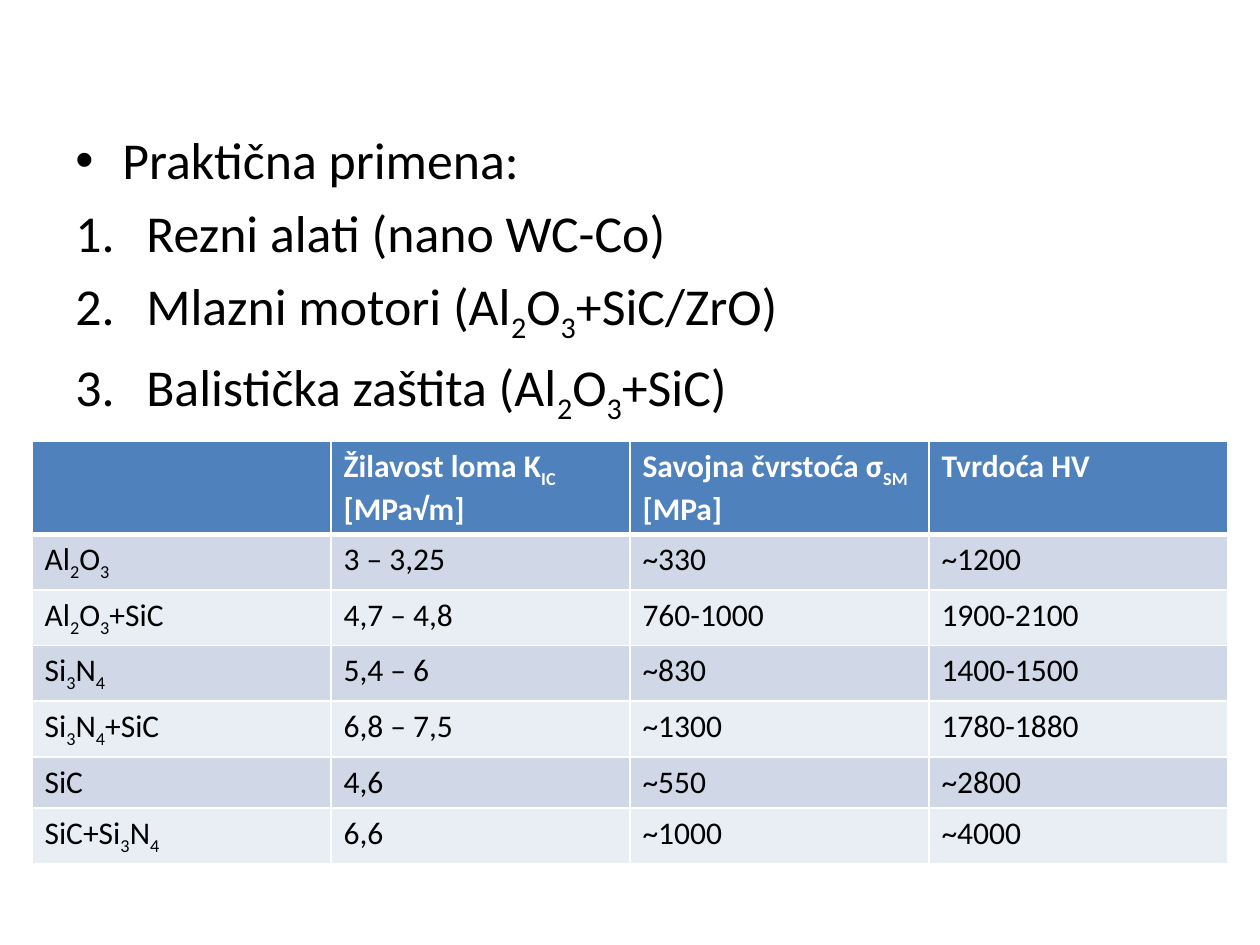
from lxml import etree
from pptx import Presentation
from pptx.dml.color import RGBColor
from pptx.enum.text import MSO_ANCHOR
from pptx.oxml.ns import qn
from pptx.util import Emu, Pt

TOP = MSO_ANCHOR.TOP
BLACK = RGBColor(0x00, 0x00, 0x00)
WHITE = RGBColor(0xFF, 0xFF, 0xFF)
HEADER_BLUE = RGBColor(0x4F, 0x81, 0xBD)
BAND_DARK = RGBColor(0xD0, 0xD8, 0xE8)
BAND_LIGHT = RGBColor(0xE9, 0xED, 0xF4)

FONT = "Calibri"
BODY_SIZE = 29.6
TABLE_SIZE = 18

# Text between a pair of underscores is set as a subscript.
HEADING = "Praktična primena:"
APPLICATIONS = [
    "Rezni alati (nano WC-Co)",
    "Mlazni motori (Al_2_O_3_+SiC/ZrO)",
    "Balistička zaštita (Al_2_O_3_+SiC)",
]
PROPERTIES = [
    ["", "Žilavost loma K_IC_ [MPa√m]", "Savojna čvrstoća σ_SM _[MPa]", "Tvrdoća HV"],
    ["Al_2_O_3_", "3 – 3,25", "~330", "~1200"],
    ["Al_2_O_3_+SiC", "4,7 – 4,8", "760-1000", "1900-2100"],
    ["Si_3_N_4_", "5,4 – 6", "~830", "1400-1500"],
    ["Si_3_N_4_+SiC", "6,8 – 7,5", "~1300", "1780-1880"],
    ["SiC", "4,6", "~550", "~2800"],
    ["SiC+Si_3_N_4_", "6,6", "~1000", "~4000"],
]


def px(length):
    return Emu(round(length * 914400 / 126))


class SlideBuilder:
    def __init__(self, deck):
        self.slide = deck.slides.add_slide(deck.slide_layouts[6])

    def add_spans(self, para, text, size, color, bold=False):
        """Fill a paragraph, lowering every second underscore-separated piece."""
        for index, piece in enumerate(text.split("_")):
            if not piece:
                continue
            span = para.add_run()
            span.text = piece
            span.font.name = FONT
            span.font.size = Pt(size)
            span.font.bold = bold
            span.font.color.rgb = color
            if index % 2:
                span.font._element.set("baseline", "-25000")

    def mark(self, para, indent, tag, **attributes):
        """Give a paragraph a hanging bullet or number."""
        properties = para._p.get_or_add_pPr()
        properties.set("marL", str(px(indent)))
        properties.set("indent", str(-px(indent)))
        etree.SubElement(properties, qn("a:buFont"), typeface="Arial" if tag == "a:buChar" else FONT)
        etree.SubElement(properties, qn(tag), **attributes)

    def numbered_list(self, left, top, width, height, heading, items):
        box = self.slide.shapes.add_textbox(px(left), px(top), px(width), px(height))
        frame = box.text_frame
        frame.word_wrap = True
        for index, text in enumerate([heading, *items]):
            para = frame.add_paragraph() if index else frame.paragraphs[0]
            para.space_before = Pt(6)
            if index:
                self.mark(para, 71, "a:buAutoNum", type="arabicPeriod")
            else:
                self.mark(para, 47, "a:buChar", char="•")
            self.add_spans(para, text, BODY_SIZE, BLACK)

    def border(self, cell, side, points):
        line = etree.SubElement(cell._tc.get_or_add_tcPr(), qn(f"a:ln{side}"), w=str(Pt(points)))
        fill = etree.SubElement(line, qn("a:solidFill"))
        etree.SubElement(fill, qn("a:srgbClr"), val=str(WHITE))

    def table(self, left, top, column_width, row_height, rows):
        row_count, column_count = len(rows), len(rows[0])
        table = self.slide.shapes.add_table(
            row_count, column_count, px(left), px(top),
            px(column_width * column_count), px(row_height * row_count)).table
        for column in table.columns:
            column.width = px(column_width)
        for row_index, values in enumerate(rows):
            table.rows[row_index].height = px(row_height)
            is_header = row_index == 0
            band = BAND_DARK if row_index % 2 else BAND_LIGHT
            widths = {"L": 1, "R": 1, "T": 3 if row_index == 1 else 1, "B": 3 if is_header else 1}
            for column_index, text in enumerate(values):
                cell = table.cell(row_index, column_index)
                cell.vertical_anchor = TOP
                for side, points in widths.items():
                    self.border(cell, side, points)
                cell.fill.solid()
                cell.fill.fore_color.rgb = HEADER_BLUE if is_header else band
                self.add_spans(cell.text_frame.paragraphs[0], text, TABLE_SIZE,
                               WHITE if is_header else BLACK, is_header)


def main():
    deck = Presentation()
    deck.slide_width, deck.slide_height = px(1260), px(945)
    page = SlideBuilder(deck)
    page.numbered_list(63, 122, 1134, 277, HEADING, APPLICATIONS)
    page.table(32, 441, 299, 51, PROPERTIES)
    deck.save("out.pptx")


if __name__ == "__main__":
    main()
